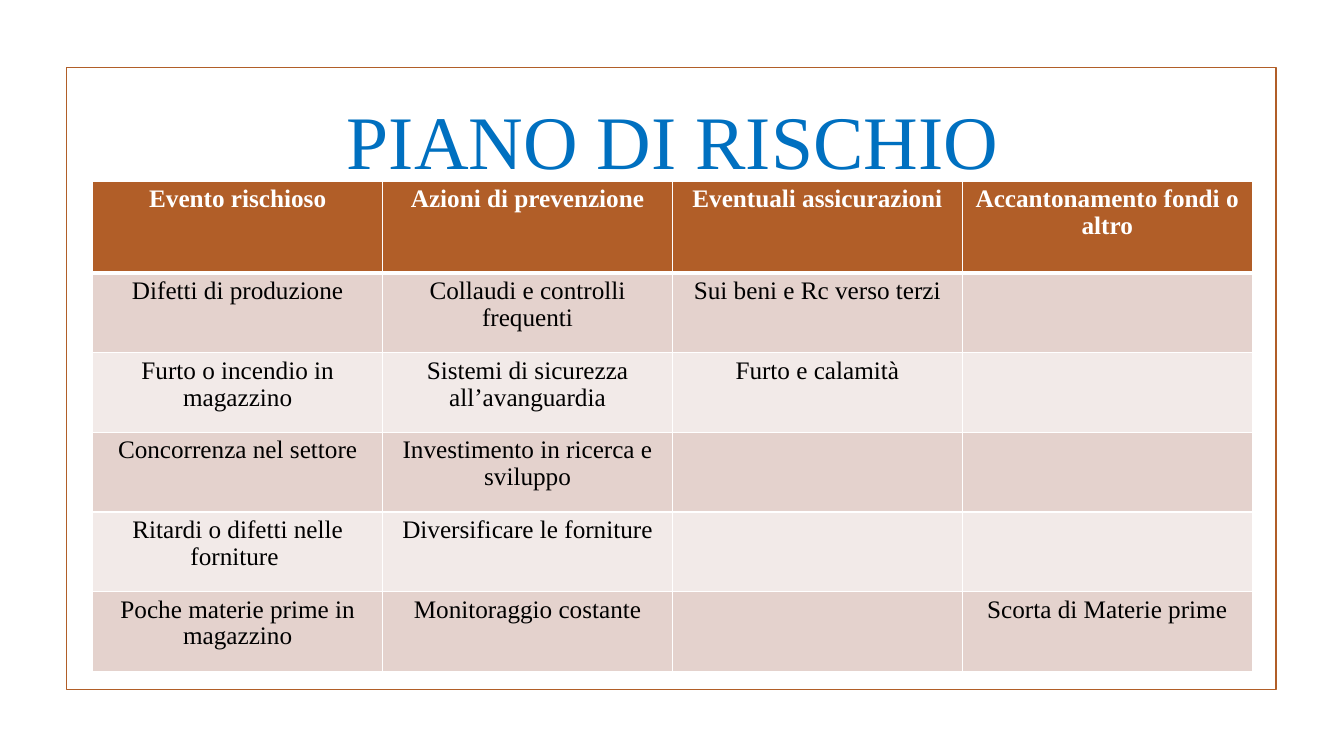
import pptx
import pptx.dml.color
import pptx.enum.shapes
import pptx.enum.text
import pptx.oxml
import pptx.oxml.ns
import pptx.util

COLORS = {
    "rust": "B15E28",
    "blue": "0070C0",
    "white": "FFFFFF",
    "black": "000000",
    "odd_row": "E4D2CD",
    "even_row": "F2EAE8",
}
FONT = "Times New Roman"
COLUMN_WIDTH = 2.875
HEADER_HEIGHT = 0.91
ROW_HEIGHT = 0.79
RISKS = [
    ["Evento rischioso", "Azioni di prevenzione", "Eventuali assicurazioni", "Accantonamento fondi o altro"],
    ["Difetti di produzione", "Collaudi e controlli frequenti", "Sui beni e Rc verso terzi", ""],
    ["Furto o incendio in magazzino", "Sistemi di sicurezza all’avanguardia", "Furto e calamità", ""],
    ["Concorrenza nel settore", "Investimento in ricerca e sviluppo", "", ""],
    ["Ritardi o difetti nelle forniture ", "Diversificare le forniture", "", ""],
    ["Poche materie prime in magazzino", "Monitoraggio costante", "", "Scorta di Materie prime"],
]


def color(name):
    return pptx.dml.color.RGBColor.from_string(COLORS[name])


def inches(*lengths):
    return [pptx.util.Inches(length) for length in lengths]


def write_centered(frame, text, size, color_name, bold=False):
    para = frame.paragraphs[0]
    para.alignment = pptx.enum.text.PP_ALIGN.CENTER
    span = para.add_run()
    span.text = text
    span.font.name = FONT
    span.font.size = pptx.util.Pt(size)
    span.font.bold = bold
    span.font.color.rgb = color(color_name)
    return para


def add_frame(page):
    frame = page.shapes.add_shape(
        pptx.enum.shapes.MSO_SHAPE.RECTANGLE, *inches(0.66, 0.67, 12, 6.17))
    frame.shadow.inherit = False
    frame.fill.background()
    frame.line.color.rgb = color("rust")
    frame.line.width = pptx.util.Pt(1.25)


def add_title(page, text):
    box = page.shapes.add_textbox(*inches(1.42, 0.83, 10.5, 0.98))
    frame = box.text_frame
    frame.word_wrap = True
    frame.vertical_anchor = pptx.enum.text.MSO_ANCHOR.MIDDLE
    frame.margin_top, frame.margin_bottom = inches(0.12, 0)
    write_centered(frame, text, 54, "blue")


def set_borders(cell, widths):
    properties = cell._tc.get_or_add_tcPr()
    for index, (side, width) in enumerate(widths.items()):
        border = pptx.oxml.parse_xml(
            f'<a:ln{side} {pptx.oxml.ns.nsdecls("a")} w="{pptx.util.Pt(width)}">'
            f'<a:solidFill><a:srgbClr val="{COLORS["white"]}"/></a:solidFill></a:ln{side}>')
        properties.insert(index, border)


def fill_cell(cell, text, row):
    header = row == 0
    fill_name = "rust" if header else ("odd_row" if row % 2 else "even_row")
    cell.fill.solid()
    cell.fill.fore_color.rgb = color(fill_name)
    set_borders(cell, {"L": 1, "R": 1, "T": 3 if row == 1 else 1, "B": 3 if header else 1})
    if text:
        para = write_centered(cell.text_frame, text, 18, "white" if header else "black", header)
        para.line_spacing = 0.96


def add_risk_table(page):
    rows, columns = len(RISKS), len(RISKS[0])
    height = HEADER_HEIGHT + ROW_HEIGHT * (rows - 1)
    table = page.shapes.add_table(
        rows, columns, *inches(0.92, 1.8, COLUMN_WIDTH * columns, height)).table
    for column in table.columns:
        column.width = pptx.util.Inches(COLUMN_WIDTH)
    for row, texts in enumerate(RISKS):
        table.rows[row].height = pptx.util.Inches(ROW_HEIGHT if row else HEADER_HEIGHT)
        for column, text in enumerate(texts):
            fill_cell(table.cell(row, column), text, row)


def main():
    deck = pptx.Presentation()
    deck.slide_width, deck.slide_height = inches(13.33, 7.5)
    page = deck.slides.add_slide(deck.slide_layouts[6])
    add_frame(page)
    add_title(page, "PIANO DI RISCHIO")
    add_risk_table(page)
    deck.save("out.pptx")


if __name__ == "__main__":
    main()
